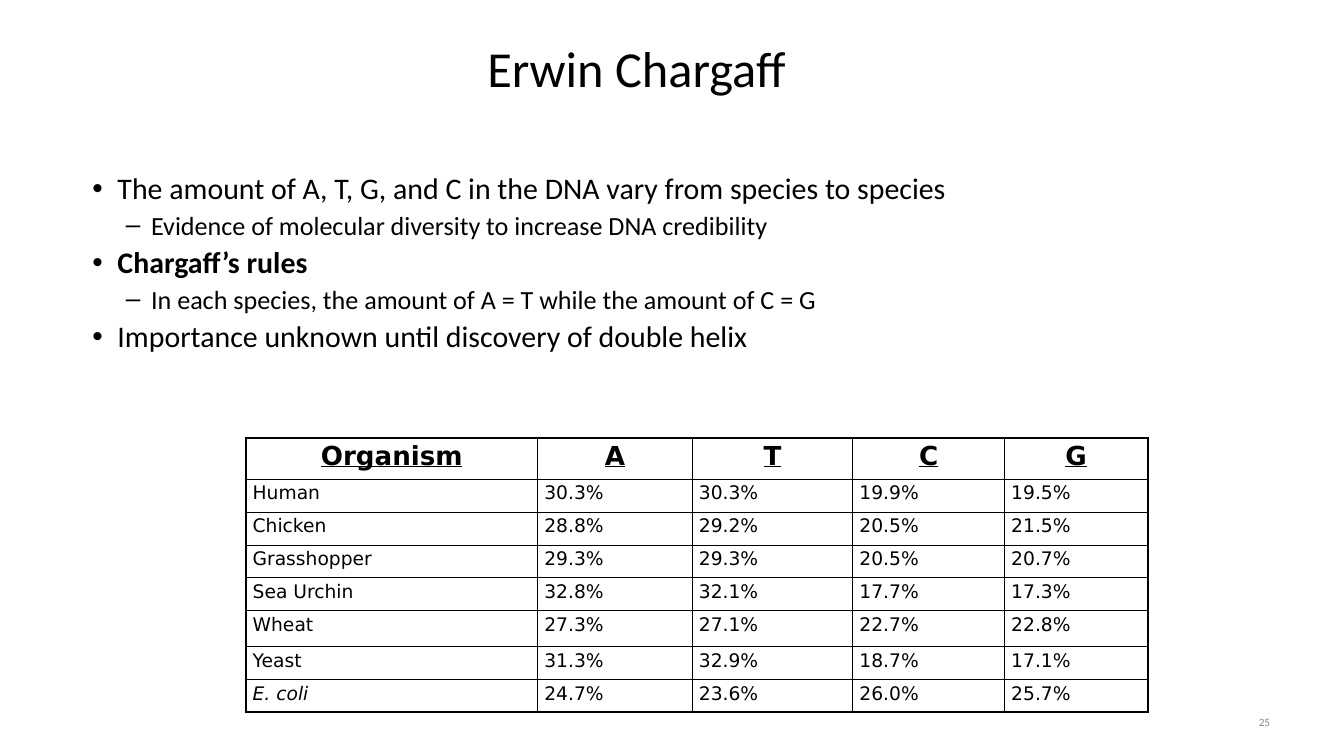
from lxml import etree
from pptx import Presentation
from pptx import util as u
from pptx.dml.color import RGBColor
from pptx.enum import text
from pptx.oxml import ns

Pt = u.Pt
BLACK = RGBColor(0x00, 0x00, 0x00)
GRAY = RGBColor(0x88, 0x88, 0x88)
LEFT, MID, RIGHT = text.PP_ALIGN.LEFT, text.PP_ALIGN.CENTER, text.PP_ALIGN.RIGHT
THIN, THICK = 1, 2.25

# Bullet levels: sign, left indent, text size
LEVELS = [("•", 36, 32), ("–", 72, 28)]
HANG = 27

POINTS = [
    (0, "The amount of A, T, G, and C in the DNA vary from species to species", False),
    (1, "Evidence of molecular diversity to increase DNA credibility", False),
    (0, "Chargaff’s rules", True),
    (1, "In each species, the amount of A = T while the amount of C = G", False),
    (0, "Importance unknown until discovery of double helix", False),
]

BASES = [
    ("Organism", "A", "T", "C", "G"),
    ("Human", "30.3%", "30.3%", "19.9%", "19.5%"),
    ("Chicken", "28.8%", "29.2%", "20.5%", "21.5%"),
    ("Grasshopper", "29.3%", "29.3%", "20.5%", "20.7%"),
    ("Sea Urchin", "32.8%", "32.1%", "17.7%", "17.3%"),
    ("Wheat", "27.3%", "27.1%", "22.7%", "22.8%"),
    ("Yeast", "31.3%", "32.9%", "18.7%", "17.1%"),
    ("E. coli", "24.7%", "23.6%", "26.0%", "25.7%"),
]
WIDTHS = [312.5, 165.6, 172, 162.7, 153.4]
HEIGHTS = [43.9] + [35.3] * 4 + [38.2] + [35.3] * 2


def child(node, tag, **attrs):
    return etree.SubElement(node, ns.qn(tag), attrs)


class Page:
    """Holds the slide and its text style."""

    def __init__(self, slide, face="Calibri", grid="DejaVu Sans"):
        self.slide, self.face, self.grid = slide, face, grid

    def run(self, para, words, size, color=BLACK, face=None, **marks):
        run = para.add_run()
        run.text = words
        font = run.font
        font.name, font.size = face or self.face, Pt(size)
        font.color.rgb = color
        for name, value in marks.items():
            setattr(font, name, value)

    def box(self, x, y, w, h, anchor=text.MSO_ANCHOR.TOP):
        frame = self.slide.shapes.add_textbox(Pt(x), Pt(y), Pt(w), Pt(h)).text_frame
        frame.word_wrap = True
        frame.vertical_anchor = anchor
        return frame

    def label(self, place, words, size, align, color=BLACK):
        para = self.box(*place, text.MSO_ANCHOR.MIDDLE).paragraphs[0]
        para.alignment = align
        self.run(para, words, size, color)

    def bullets(self, place, points):
        frame = self.box(*place)
        for i, (level, words, bold) in enumerate(points):
            para = frame.add_paragraph() if i else frame.paragraphs[0]
            sign, indent, size = LEVELS[level]
            para.level = level
            if i:
                para.space_before = Pt(3.6)
            props = para._p.get_or_add_pPr()
            props.set("marL", str(Pt(indent)))
            props.set("indent", str(Pt(-HANG)))
            child(props, "a:buFont", typeface="Arial")
            child(props, "a:buChar", char=sign)
            self.run(para, words, size, bold=bold)

    def border(self, cell, sides):
        props = cell._tc.get_or_add_tcPr()
        for side, width in sides.items():
            line = child(props, "a:ln" + side, w=str(Pt(width)))
            fill = child(line, "a:solidFill")
            child(fill, "a:srgbClr", val=str(BLACK))

    def table(self, x, y, rows):
        last, end = len(rows) - 1, len(WIDTHS) - 1
        table = self.slide.shapes.add_table(
            len(rows), len(WIDTHS), Pt(x), Pt(y), Pt(sum(WIDTHS)), Pt(sum(HEIGHTS))
        ).table
        table.first_row = table.horz_banding = False
        for col, width in zip(table.columns, WIDTHS):
            col.width = Pt(width)
        for r, row in enumerate(rows):
            table.rows[r].height = Pt(HEIGHTS[r])
            for c, words in enumerate(row):
                cell = table.cell(r, c)
                # Thick outer frame, thin inner lines
                self.border(cell, {
                    "L": THIN if c else THICK,
                    "R": THICK if c == end else THIN,
                    "T": THIN if r else THICK,
                    "B": THICK if r == last else THIN,
                })
                cell.fill.background()
                head = r == 0
                para = cell.text_frame.paragraphs[0]
                para.alignment = MID if head else LEFT
                self.run(para, words, 28 if head else 20, face=self.grid,
                         bold=head, underline=head, italic=words == "E. coli")


def main():
    deck = Presentation()
    deck.slide_width, deck.slide_height = Pt(1440), Pt(810)
    page = Page(deck.slides.add_slide(deck.slide_layouts[6]))

    # Title and main points
    page.label((358, 27.4, 648, 90), "Erwin Chargaff", 54, MID)
    page.bullets((82.8, 178.6, 1232.6, 246.2), POINTS)

    # Page number
    page.label((1200.2, 758.9, 167.8, 28.8), "25", 12, RIGHT, GRAY)

    # Share of each base by organism
    page.table(263.5, 469.4, BASES)

    deck.save("out.pptx")


if __name__ == "__main__":
    main()
